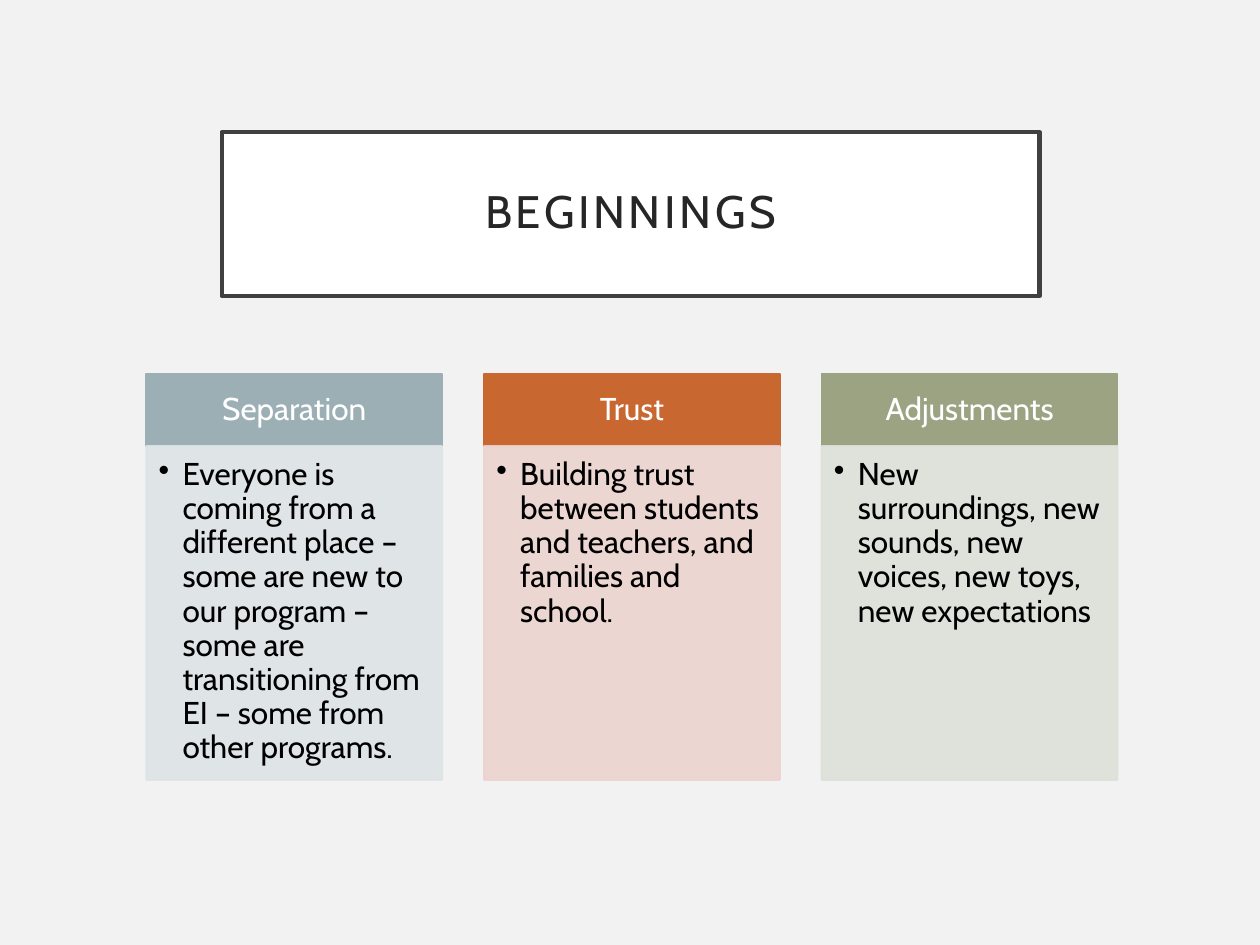
"""Build the Beginnings slide: a framed title above three topic columns."""
from lxml.etree import SubElement
from pptx import Presentation
from pptx.dml.color import RGBColor
from pptx.enum.shapes import MSO_SHAPE
from pptx.enum.text import MSO_ANCHOR, PP_ALIGN
from pptx.oxml.ns import qn
from pptx.util import Inches, Pt

COLORS = {
    "background": "F2F2F2", "title fill": "FFFFFF", "frame": "404040",
    "title": "262626", "heading": "FFFFFF", "detail": "000000",
    "Separation": "9BAFB5", "Separation tint": "DEE3E5",
    "Trust": "C96731", "Trust tint": "EBD3CE",
    "Adjustments": "9CA383", "Adjustments tint": "DEE0D9",
}
TOPICS = {
    "Separation": "Everyone is coming from a different place – some are new to our program –"
                  "some are transitioning from EI – some from other programs.",
    "Trust": "Building trust between students and teachers, and families and school.",
    "Adjustments": "New surroundings, new sounds, new voices, new toys, new expectations",
}
GRID_LEFT, COLUMN_WIDTH, COLUMN_STEP = 1.16, 2.35, 2.68
HEADING_TOP, HEADING_HEIGHT, DETAIL_HEIGHT = 2.97, 0.57, 2.65
INDENT = Inches(0.19)


def add_panel(place, fill, line, line_width, insets, anchor):
    panel = slide.shapes.add_shape(MSO_SHAPE.RECTANGLE, *[Inches(length) for length in place])
    panel.shadow.inherit = False
    panel.fill.solid()
    panel.fill.fore_color.rgb = RGBColor.from_string(COLORS[fill])
    panel.line.color.rgb = RGBColor.from_string(COLORS[line])
    panel.line.width = Pt(line_width)
    frame = panel.text_frame
    frame.word_wrap = True
    frame.vertical_anchor = anchor
    frame.margin_left, frame.margin_top, frame.margin_right, frame.margin_bottom = [
        Inches(inset) for inset in insets]
    return panel


def write(panel, wording, size, color, alignment):
    paragraph = panel.text_frame.paragraphs[0]
    paragraph.alignment = alignment
    paragraph.line_spacing = 0.9
    run = paragraph.add_run()
    run.text = wording
    run.font.name = "Cabin"
    run.font.size = Pt(size)
    run.font.color.rgb = RGBColor.from_string(COLORS[color])
    return paragraph


presentation = Presentation()
presentation.slide_width, presentation.slide_height = Inches(10), Inches(7.5)
slide = presentation.slides.add_slide(presentation.slide_layouts[6])
slide.background.fill.solid()
slide.background.fill.fore_color.rgb = RGBColor.from_string(COLORS["background"])

title = add_panel((1.76, 1.05, 6.49, 1.3), "title fill", "frame", 2.5, [0.2] * 4, MSO_ANCHOR.MIDDLE)
title_line = write(title, "BEGINNINGS", 26, "title", PP_ALIGN.CENTER)
title_line.runs[0].font._element.set("spc", "200")

for column, (topic, explanation) in enumerate(TOPICS.items()):
    left = GRID_LEFT + column * COLUMN_STEP
    heading = add_panel((left, HEADING_TOP, COLUMN_WIDTH, HEADING_HEIGHT), topic, topic, 1,
                        (0.14, 0.08, 0.14, 0.08), MSO_ANCHOR.MIDDLE)
    write(heading, topic, 18, "heading", PP_ALIGN.CENTER)

    tint = f"{topic} tint"
    detail = add_panel((left, HEADING_TOP + HEADING_HEIGHT, COLUMN_WIDTH, DETAIL_HEIGHT),
                       tint, tint, 1, (0.1, 0.1, 0.14, 0.16), MSO_ANCHOR.TOP)
    for color in detail._element.spPr.iter(qn("a:srgbClr")):
        SubElement(color, qn("a:alpha"), val="90000")
    bullet_line = write(detail, explanation, 18, "detail", PP_ALIGN.LEFT)
    properties = bullet_line._p.get_or_add_pPr()
    properties.set("marL", str(INDENT))
    properties.set("indent", str(-INDENT))
    SubElement(properties, qn("a:buChar"), char="•")

presentation.save("out.pptx")
